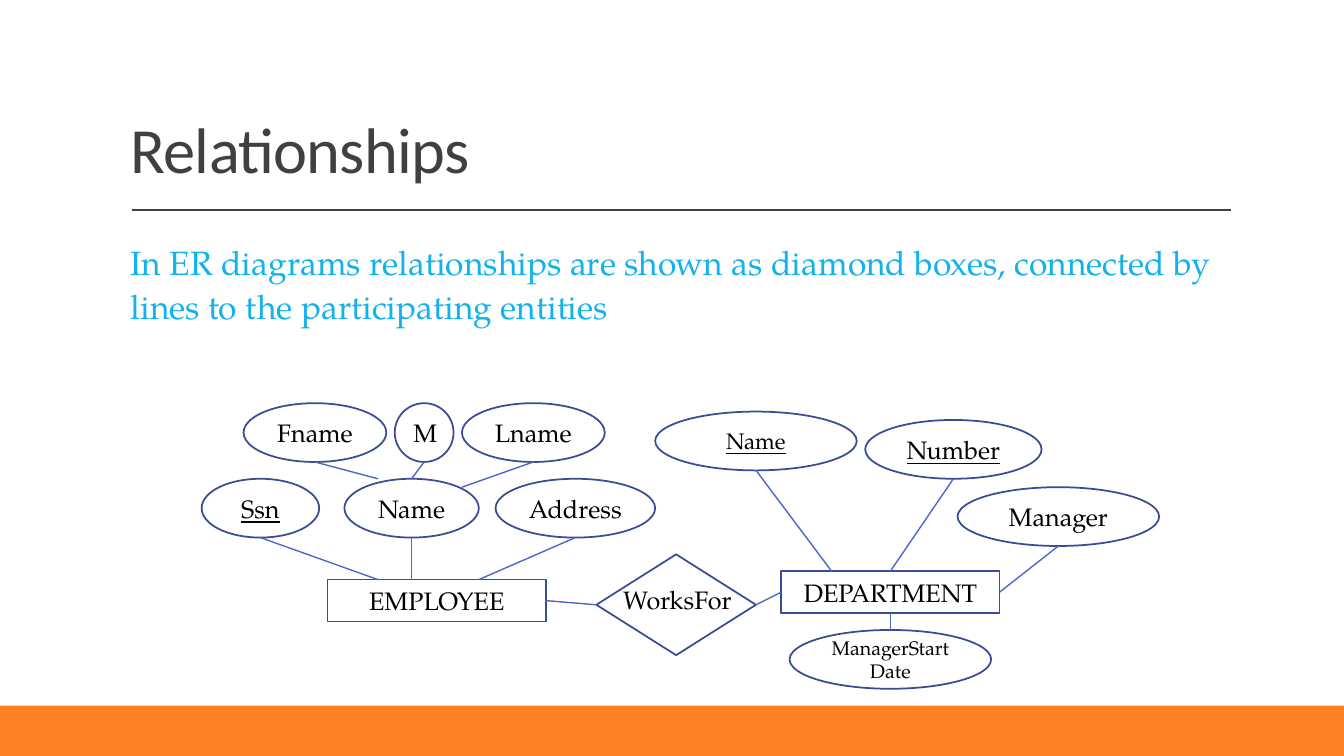
import pptx
import pptx.dml.color
import pptx.enum.shapes
import pptx.enum.text
import pptx.oxml.ns
import pptx.util
from lxml import etree

# Content: boxes are (left, top, width, height) in px, 96 px to the inch
SLIDE_SIZE = (1280, 720)
FOOTER_BAND = (0, 672, 1280, 48)
TITLE = ("Relationships", (115, 30, 1056, 153))
TITLE_RULE = ((126, 200), (1172, 200))
STATEMENT = (
    "In ER diagrams relationships are shown as diamond boxes, "
    "connected by lines to the participating entities",
    (115, 222, 1056, 130),
)
ENTITIES = [
    ("EMPLOYEE", (312, 552)),
    ("DEPARTMENT", (744, 544)),
]
ENTITY_SIZE = (208, 40)
ATTRIBUTE_HEIGHT = 56
# label, left, top, width, size role, is key, point its link runs to
ATTRIBUTES = [
    ("Ssn", 192, 456, 112, "label", True, (360, 552)),
    ("Address", 472, 456, 152, "label", False, (456, 552)),
    ("Name", 328, 456, 128, "label", False, (392, 552)),
    ("Fname", 232, 384, 136, "label", False, (360, 456)),
    ("Lname", 440, 384, 136, "label", False, (440, 464)),
    ("M", 376, 384, 56, "label", False, (392, 456)),
    ("Name", 624, 392, 192, "small", True, (792, 544)),
    ("Number", 824, 400, 168, "label", True, (848, 544)),
    ("Manager", 912, 464, 192, "label", False, (952, 564)),
    ("ManagerStartDate", 752, 600, 192, "tiny", False, (848, 584)),
]
RELATIONSHIP = ("WorksFor", (568, 528, 152, 96), (584, 552, 124, 38))
RELATIONSHIP_LINKS = [((568, 576), (520, 572)), ((744, 564), (720, 576))]

THEME = {
    "heading_font": "Calibri",
    "body_font": "TeX Gyre Pagella",
    "colors": {
        "band": "FF8021", "heading": "404040", "statement": "12B2EB",
        "outline": "3A4C94", "link": "4E67C8", "paper": "FFFFFF", "ink": "000000",
    },
    "sizes": {"heading": 46, "statement": 24, "label": 18, "small": 16, "tiny": 14},
}
SHAPES = pptx.enum.shapes.MSO_SHAPE
ANCHOR = pptx.enum.text.MSO_ANCHOR
ALIGN = pptx.enum.text.PP_ALIGN


def px(length):
    return pptx.util.Emu(length * 9525)


def color(role):
    return pptx.dml.color.RGBColor.from_string(THEME["colors"][role])


def write(frame, words, size, ink="ink", font="body_font", underline=None):
    frame.text = words
    paragraph = frame.paragraphs[0]
    style = paragraph.runs[0].font
    style.name = THEME[font]
    style.size = pptx.util.Pt(THEME["sizes"][size])
    style.color.rgb = color(ink)
    style.underline = underline
    return paragraph


def add_text(slide, words, box, size, wrap=True, **style):
    frame = slide.shapes.add_textbox(*map(px, box)).text_frame
    frame.word_wrap = wrap
    return frame, write(frame, words, size, **style)


def add_outline(slide, kind, box, fill="paper", line="outline"):
    outline = slide.shapes.add_shape(kind, *map(px, box))
    outline.shadow.inherit = False
    if fill:
        outline.fill.solid()
        outline.fill.fore_color.rgb = color(fill)
    else:
        outline.fill.background()
    if line:
        outline.line.color.rgb = color(line)
        outline.line.width = pptx.util.Pt(1.25)
    else:
        outline.line.fill.background()
    return outline


def add_labelled(slide, kind, box, label, size="label", is_key=False):
    frame = add_outline(slide, kind, box).text_frame
    frame.word_wrap = True
    frame.vertical_anchor = ANCHOR.MIDDLE
    write(frame, label, size, underline=is_key or None).alignment = ALIGN.CENTER


def add_link(slide, start, end, ink="link"):
    link = slide.shapes.add_connector(
        pptx.enum.shapes.MSO_CONNECTOR.STRAIGHT, *map(px, start + end))
    link.line.color.rgb = color(ink)
    link.line.width = pptx.util.Pt(1)
    etree.SubElement(link._element.spPr, pptx.oxml.ns.qn("a:effectLst"))


def add_heading(slide):
    add_outline(slide, SHAPES.RECTANGLE, FOOTER_BAND, fill="band", line=None)
    add_link(slide, *TITLE_RULE, ink="heading")
    frame, title = add_text(slide, *TITLE, "heading", ink="heading", font="heading_font")
    frame.vertical_anchor = ANCHOR.BOTTOM
    title.line_spacing = 0.9
    title.runs[0].font._element.set("spc", "-50")

    frame, statement = add_text(slide, *STATEMENT, "statement", ink="statement")
    frame.margin_right = 0
    statement.line_spacing = 1.1
    statement.space_before = pptx.util.Pt(12)
    statement.space_after = pptx.util.Pt(2)


def add_diagram(slide):
    # Entities
    for label, corner in ENTITIES:
        add_labelled(slide, SHAPES.RECTANGLE, corner + ENTITY_SIZE, label)

    # Attributes, each linked from its edge nearest the target
    for label, left, top, width, size, is_key, target in ATTRIBUTES:
        box = (left, top, width, ATTRIBUTE_HEIGHT)
        add_labelled(slide, SHAPES.OVAL, box, label, size, is_key)
        edge = top if target[1] < top else top + ATTRIBUTE_HEIGHT
        add_link(slide, (left + width // 2, edge), target)

    # Relationship between the two entities
    label, diamond_box, label_box = RELATIONSHIP
    add_outline(slide, SHAPES.DIAMOND, diamond_box, fill=None)
    add_text(slide, label, label_box, "label", wrap=False)
    for start, end in RELATIONSHIP_LINKS:
        add_link(slide, start, end)


def main():
    deck = pptx.Presentation()
    deck.slide_width, deck.slide_height = map(px, SLIDE_SIZE)
    slide = deck.slides.add_slide(deck.slide_layouts[6])
    add_heading(slide)
    add_diagram(slide)
    deck.save("out.pptx")


if __name__ == "__main__":
    main()
